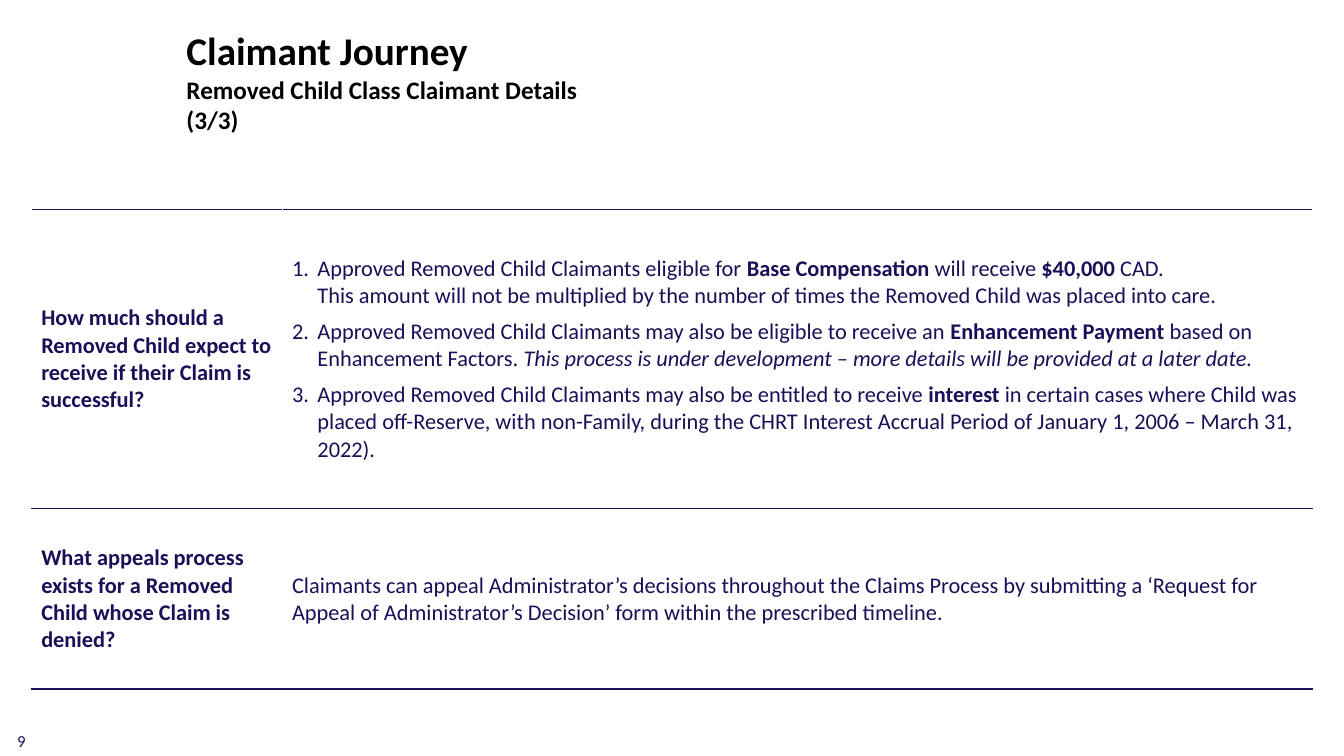
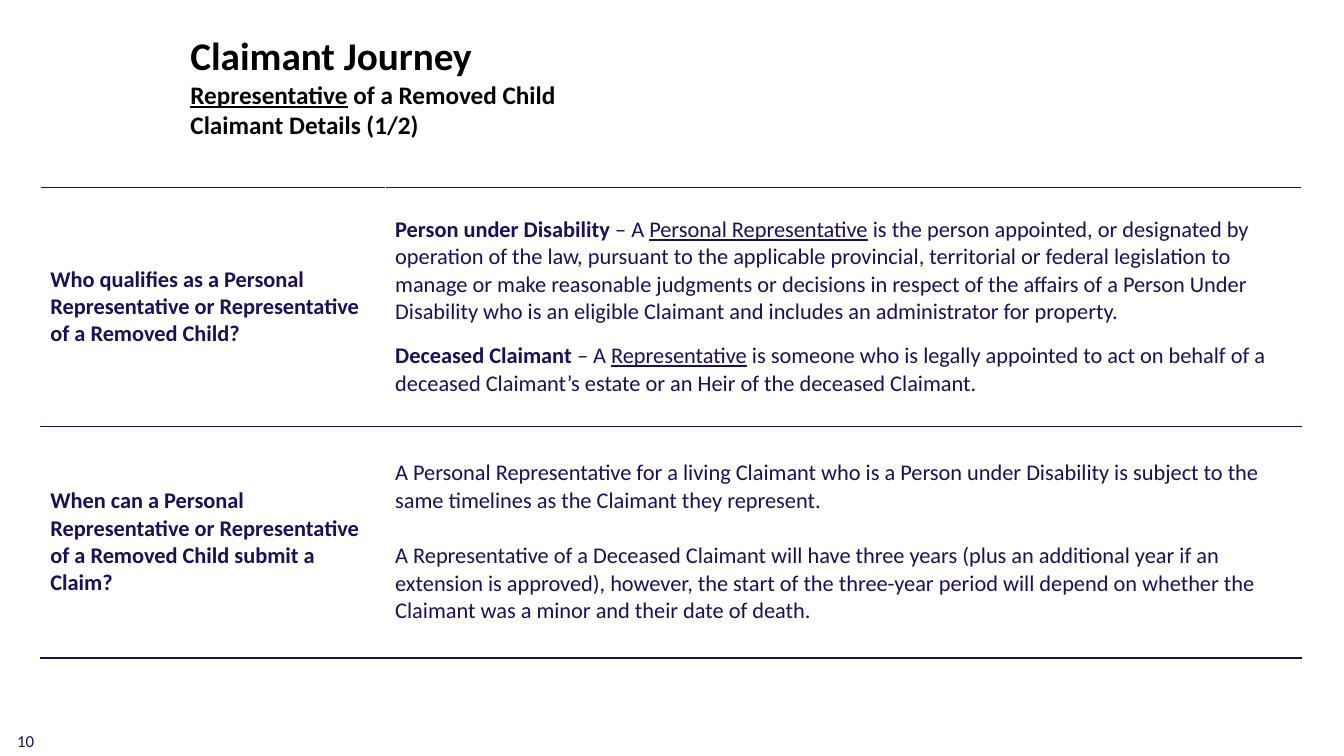
"""Builds two Claimant Journey slides, each with a title and a question table."""
from lxml import etree
from pptx import Presentation
from pptx import util as u
from pptx.dml.color import RGBColor
from pptx.enum import text
from pptx.oxml.ns import qn

COLORS = {"title": "000000", "body": "1B0F58", "edge": "FFFFFF"}
FLAGS = {"b": "bold", "i": "italic", "u": "underline"}
TITLE = {"size": u.Pt(28), "bold": True, "color": "title"}
SUBTITLE = {"size": u.Pt(18), "bold": True, "color": "title"}
QUESTION = {"size": u.Pt(16), "bold": True, "color": "body"}
ANSWER = {"size": u.Pt(16), "bold": False, "color": "body"}
NUMBER = {"size": u.Pt(12), "bold": False, "color": "body"}
CELL = {"margin_left": u.Cm(0.25), "margin_right": u.Cm(0.25), "margin_top": 0,
        "margin_bottom": 0, "vertical_anchor": text.MSO_ANCHOR.MIDDLE}
FRAME = {"margin_left": 0, "margin_right": 0, "margin_top": 0,
         "margin_bottom": 0, "word_wrap": True}

SLIDES = [
    {
        "number": "9",
        "title_box": (4.7, 0.66, 9.88, 2.8),
        "subtitle": [("Removed Child Class Claimant Details (3/3)", "")],
        "table_at": (0.79, 5.28),
        "cols": (6.32, 25.96),
        "rows": (7.54, 4.55),
        "bottom_line": 1.5,
        "content": [
            ("How much should a Removed Child expect to receive if their Claim is successful?",
             {"numbered": True, "gap": 6},
             [[("Approved Removed Child Claimants eligible for ", ""),
               ("Base Compensation ", "b"), ("will receive ", ""), ("$40,000 ", "b"),
               ("CAD.\nThis amount will not be multiplied by the number of times the "
                "Removed Child was placed into care.", "")],
              [("Approved Removed Child Claimants may also be eligible to receive an ", ""),
               ("Enhancement Payment ", "b"), ("based on Enhancement Factors. ", ""),
               ("This process is under development – more details will be provided "
                "at a later date.", "i")],
              [("Approved Removed Child Claimants may also be entitled to receive ", ""),
               ("interest ", "b"),
               ("in certain cases where Child was placed off-Reserve, with non-Family, "
                "during the CHRT Interest Accrual Period of January 1, 2006 – "
                "March 31, 2022).", "")]]),
            ("What appeals process exists for a Removed Child whose Claim is denied?",
             {"numbered": False, "gap": 0},
             [[("Claimants can appeal Administrator’s decisions throughout the Claims "
                "Process by submitting a ‘Request for Appeal of Administrator’s "
                "Decision’ form within the prescribed timeline.", "")]]),
        ],
    },
    {
        "number": "10",
        "title_box": (4.8, 0.79, 11.07, 2.8),
        "subtitle": [("Representative", "u"), (" of a Removed Child Claimant Details (1/2)", "")],
        "table_at": (1.02, 4.72),
        "cols": (8.69, 23.09),
        "rows": (6.02, 5.84),
        "bottom_line": 1,
        "content": [
            ("Who qualifies as a Personal Representative or Representative of a Removed Child?",
             {"numbered": False, "gap": 12},
             [[("Person under Disability ", "b"), ("– A ", ""),
               ("Personal Representative", "u"),
               (" is the person appointed, or designated by operation of the law, pursuant "
                "to the applicable provincial, territorial or federal legislation to manage "
                "or make reasonable judgments or decisions in respect of the affairs of a "
                "Person Under Disability who is an eligible Claimant and includes an "
                "administrator for property.", "")],
              [("Deceased Claimant ", "b"), ("– A ", ""), ("Representative", "u"),
               (" is someone who is legally appointed to act on behalf of a deceased "
                "Claimant’s estate or an Heir of the deceased Claimant.", "")]]),
            ("When can a Personal Representative or Representative of a Removed Child "
             "submit a Claim?",
             {"numbered": False, "gap": 20},
             [[("A Personal Representative for a living Claimant who is a Person under "
                "Disability is subject to the same timelines as the Claimant they "
                "represent.", "")],
              [("A Representative of a Deceased Claimant will have three years (plus an "
                "additional year if an extension is approved), however, the start of the "
                "three-year period will depend on whether the Claimant was a minor and "
                "their date of death.", "")]]),
        ],
    },
]


def add_runs(p, runs, style):
    for content, flags in runs:
        for i, line in enumerate(content.split("\n")):
            if i:
                p.add_line_break()
            r = p.add_run()
            r.text = line
            r.font.name = "Calibri"
            r.font.size = style["size"]
            r.font.bold = style["bold"]
            r.font.color.rgb = RGBColor.from_string(COLORS[style["color"]])
            for flag in flags:
                setattr(r.font, FLAGS[flag], True)


def add_box(s, box):
    tf = s.shapes.add_textbox(*map(u.Cm, box)).text_frame
    for name, value in FRAME.items():
        setattr(tf, name, value)
    return tf


prs = Presentation()
prs.slide_width, prs.slide_height = u.Cm(33.87), u.Cm(19.05)

for data in SLIDES:
    s = prs.slides.add_slide(prs.slide_layouts[6])

    tf = add_box(s, data["title_box"])
    add_runs(tf.paragraphs[0], [("Claimant Journey", "")], TITLE)
    p = tf.add_paragraph()
    p.space_before = u.Pt(0.7)
    add_runs(p, data["subtitle"], SUBTITLE)

    cols, rows = data["cols"], data["rows"]
    sizes = data["table_at"] + (sum(cols), sum(rows))
    table = s.shapes.add_table(len(rows), len(cols), *map(u.Cm, sizes)).table
    table.first_row = table.horz_banding = False
    for col, width in zip(table.columns, cols):
        col.width = u.Cm(width)
    for row, height in zip(table.rows, rows):
        row.height = u.Cm(height)

    for i, (question, layout, answer) in enumerate(data["content"]):
        bottom = data["bottom_line"] if i == len(rows) - 1 else 1
        borders = {"lnL": ("edge", 1), "lnR": ("edge", 1),
                   "lnT": ("body", 1), "lnB": ("body", bottom)}
        for cell in table.rows[i].cells:
            for name, value in CELL.items():
                setattr(cell, name, value)
            tcPr = cell._tc.get_or_add_tcPr()
            for tag, (color, width) in borders.items():
                ln = etree.SubElement(tcPr, qn("a:" + tag), w=str(u.Pt(width)))
                fill = etree.SubElement(ln, qn("a:solidFill"))
                etree.SubElement(fill, qn("a:srgbClr"), val=COLORS[color])
            cell.fill.background()

        add_runs(table.cell(i, 0).text_frame.paragraphs[0], [(question, "")], QUESTION)
        tf = table.cell(i, 1).text_frame
        for j, runs in enumerate(answer):
            p = tf.add_paragraph() if j else tf.paragraphs[0]
            if j:
                p.space_before = u.Pt(layout["gap"])
            if layout["numbered"]:
                pPr = p._p.get_or_add_pPr()
                pPr.set("marL", str(u.Cm(0.64)))
                pPr.set("indent", str(u.Cm(-0.64)))
                etree.SubElement(pPr, qn("a:buFont"), typeface="Calibri")
                etree.SubElement(pPr, qn("a:buAutoNum"), type="arabicPeriod")
            add_runs(p, runs, ANSWER)

    tf = add_box(s, (0.43, 18.49, 0.8, 0.48))
    tf.paragraphs[0].line_spacing = u.Pt(12.4)
    add_runs(tf.paragraphs[0], [(data["number"], "")], NUMBER)

prs.save("out.pptx")
